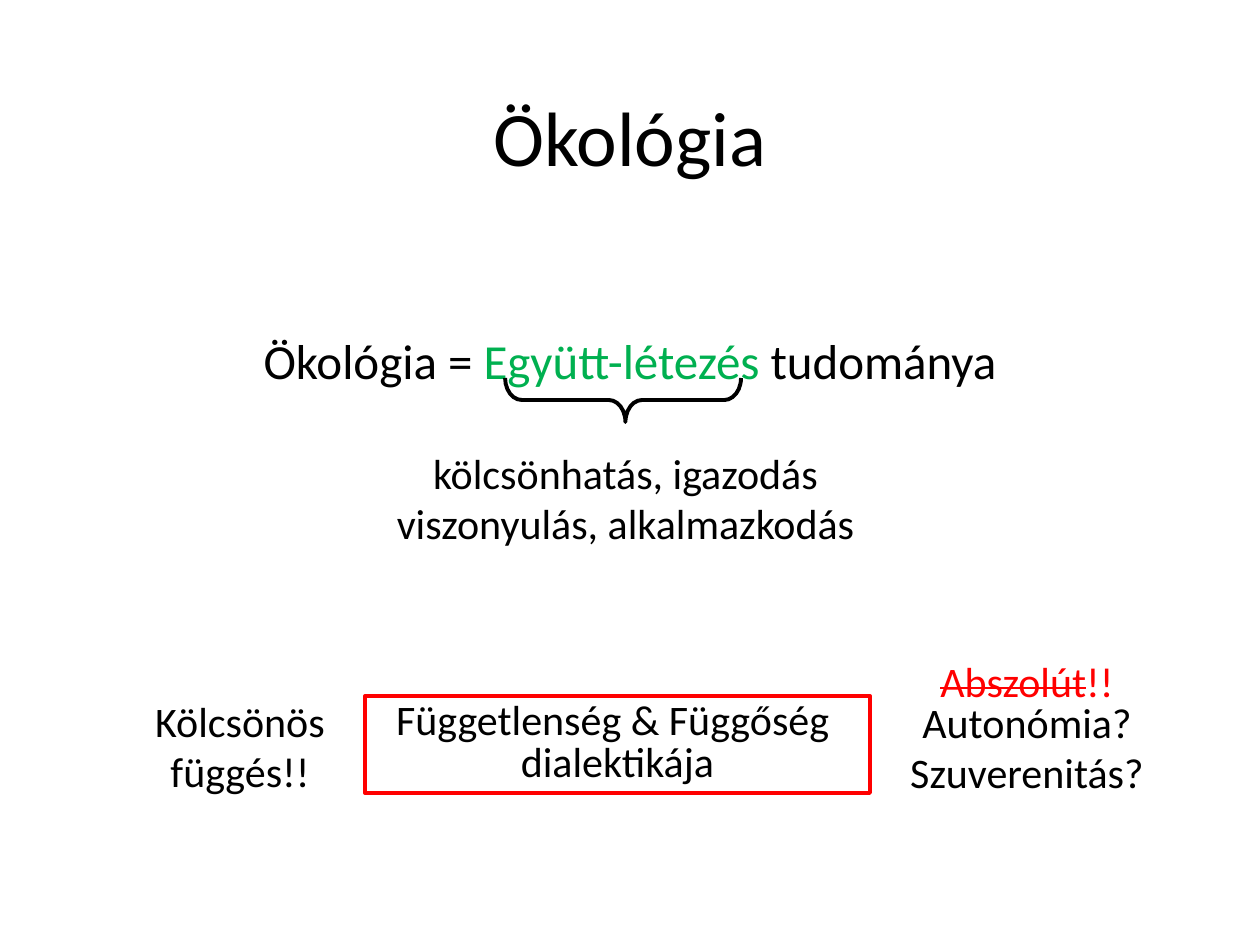
"""Build the slide on ecology as the science of existing together."""
from pptx import Presentation
from pptx.dml.color import RGBColor
from pptx.enum.shapes import MSO_SHAPE as SHAPE
from pptx.enum.text import MSO_ANCHOR as ANCHOR, PP_ALIGN as ALIGN
from pptx.util import Emu, Pt

PX = 914400 / 126
BLACK, RED, GREEN = "000000", "FF0000", "00B050"


def rgb(code):
    return RGBColor.from_string(code)


def write(sp, size, lines, spacing=None, anchor=ANCHOR.TOP):
    tf = sp.text_frame
    tf.word_wrap = True
    tf.vertical_anchor = anchor
    for i, runs in enumerate(lines):
        p = tf.paragraphs[0] if i == 0 else tf.add_paragraph()
        p.alignment = ALIGN.CENTER
        p.line_spacing = spacing
        for text, color, strike in runs:
            r = p.add_run()
            r.text = text
            r.font.name = "Calibri"
            r.font.size = Pt(size)
            r.font.color.rgb = rgb(color)
            if strike:
                r.font._element.set("strike", "sngStrike")


prs = Presentation()
prs.slide_width, prs.slide_height = Emu(round(1260 * PX)), Emu(round(945 * PX))
slide = prs.slides.add_slide(prs.slide_layouts[6])

texts = [
    ((87, 50, 1086, 183), 44, [[("Ökológia", BLACK, False)]], 0.9, ANCHOR.MIDDLE),
    ((87, 324, 1086, 72), 28, [[("Ökológia = ", BLACK, False),
                                ("Együtt-létezés", GREEN, False),
                                (" tudománya", BLACK, False)]], None, ANCHOR.TOP),
    ((359, 441, 533, 115), 24, [[("kölcsönhatás, igazodás", BLACK, False)],
                                [("viszonyulás, alkalmazkodás", BLACK, False)]], None, ANCHOR.TOP),
    ((125, 689, 230, 115), 24, [[("Kölcsönös", BLACK, False)],
                                [("függés!!", BLACK, False)]], None, ANCHOR.TOP),
    ((881, 690, 292, 115), 24, [[("Autonómia?", BLACK, False)],
                                [("Szuverenitás?", BLACK, False)]], None, ANCHOR.TOP),
    ((920, 649, 214, 63), 24, [[("Abszolút", RED, True),
                                ("!!", RED, False)]], None, ANCHOR.TOP),
]
for box, size, lines, spacing, anchor in texts:
    sp = slide.shapes.add_textbox(*[Emu(round(v * PX)) for v in box])
    write(sp, size, lines, spacing, anchor)

outlines = []
for kind, box, color in [(SHAPE.RECTANGLE, (365, 696, 505, 97), RED),
                         (SHAPE.RIGHT_BRACE, (601, 282, 44, 236), BLACK)]:
    sp = slide.shapes.add_shape(kind, *[Emu(round(v * PX)) for v in box])
    sp.shadow.inherit = False
    sp.fill.background()
    sp.line.color.rgb = rgb(color)
    sp.line.width = Pt(2.25)
    outlines.append(sp)

frame, brace = outlines
write(frame, 24, [[("Függetlenség & Függőség ", BLACK, False)],
                  [("dialektikája", BLACK, False)]], Pt(24))
brace.rotation = 90
brace.adjustments[0] = 0.38
brace.adjustments[1] = 0.49

prs.save("out.pptx")
